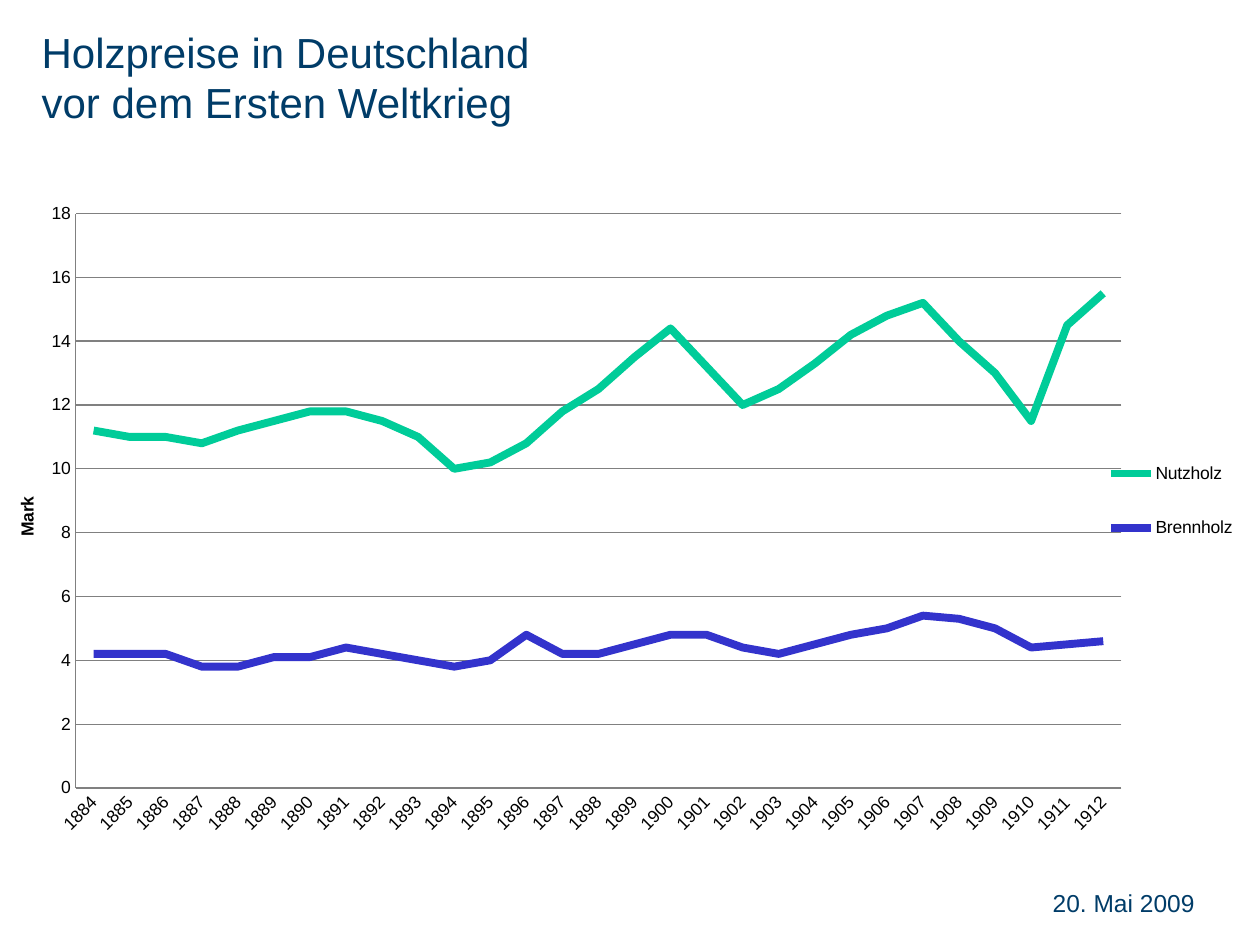
from lxml.etree import SubElement
from pptx import Presentation
from pptx.chart.data import CategoryChartData
from pptx.dml.color import RGBColor
from pptx.enum.chart import XL_CHART_TYPE, XL_LEGEND_POSITION, XL_TICK_MARK
from pptx.enum.text import MSO_ANCHOR, PP_ALIGN
from pptx.oxml.ns import qn
from pptx.util import Inches, Pt

NAVY, GREY = "003C68", "808080"


def paint(target, color):
    target.rgb = RGBColor.from_string(color)


def place(part, **spots):
    """Give a chart part a manual layout in fractions of the chart."""
    for old in part.findall(qn("c:layout")):
        part.remove(old)
    layout = SubElement(part, qn("c:layout"))
    manual = SubElement(layout, qn("c:manualLayout"))
    if part.tag == qn("c:plotArea"):
        SubElement(manual, qn("c:layoutTarget")).set("val", "inner")
    for key in ("x", "y"):
        SubElement(manual, qn(f"c:{key}Mode")).set("val", "edge")
    for key, spot in spots.items():
        SubElement(manual, qn(f"c:{key}")).set("val", str(spot))
    return layout


deck = Presentation()
deck.slide_width, deck.slide_height = Inches(10), Inches(7.5)
slide = deck.slides.add_slide(deck.slide_layouts[5])

# Title
title = slide.shapes.title
title.left, title.top = Inches(0.23), Inches(0.16)
title.width, title.height = Inches(8.5), Inches(1.2)
title.text_frame.text = "Holzpreise in Deutschland\vvor dem Ersten Weltkrieg"

# Date
date = slide.shapes.add_textbox(Inches(7.5), Inches(7), Inches(2.08), Inches(0.5))
date.text_frame.text = "20. Mai 2009"

for box, size, align in ((title, 24, PP_ALIGN.LEFT), (date, 14, PP_ALIGN.RIGHT)):
    frame = box.text_frame
    frame.word_wrap = True
    frame.vertical_anchor = MSO_ANCHOR.TOP
    para = frame.paragraphs[0]
    para.alignment = align
    for run in para.runs:
        run.font.name, run.font.size = "Arial", Pt(size)
        paint(run.font.color, NAVY)

# Prices per year
data = CategoryChartData()
data.categories = [str(year) for year in range(1884, 1913)]
data.add_series("Nutzholz", [
    11.2, 11, 11, 10.8, 11.2, 11.5, 11.8, 11.8, 11.5, 11,
    10, 10.2, 10.8, 11.8, 12.5, 13.5, 14.4, 13.2, 12, 12.5,
    13.3, 14.2, 14.8, 15.2, 14, 13, 11.5, 14.5, 15.5])
data.add_series("Brennholz", [
    4.2, 4.2, 4.2, 3.8, 3.8, 4.1, 4.1, 4.4, 4.2, 4,
    3.8, 4, 4.8, 4.2, 4.2, 4.5, 4.8, 4.8, 4.4, 4.2,
    4.5, 4.8, 5, 5.4, 5.3, 5, 4.4, 4.5, 4.6])

# Line chart
chart = slide.shapes.add_chart(XL_CHART_TYPE.LINE, Inches(0), Inches(1.41),
                               Inches(10), Inches(5.7), data).chart
chart.has_title = False
chart.font.name, chart.font.size = "Arial", Pt(10)
paint(chart.font.color, "000000")
plot = chart.plots[0]
plot.vary_by_categories = False
for line, color in zip(plot.series, ("00CC99", "3333CC")):
    line.smooth = False
    line.format.line.width = Pt(4.5)
    paint(line.format.line.color, color)
area = chart._chartSpace.chart.plotArea
area.insert(0, place(area, x=0.06, y=0.05, w=0.83, h=0.8))

# Axes
years, marks = chart.category_axis, chart.value_axis
marks.minimum_scale, marks.maximum_scale, marks.major_unit = 0, 18, 2
marks.has_major_gridlines = True
for axis in (years, marks):
    axis.major_tick_mark = axis.minor_tick_mark = XL_TICK_MARK.NONE
for part in (years, marks, marks.major_gridlines):
    part.format.line.width = Pt(0.75)
    paint(part.format.line.color, GREY)
years.tick_labels.font.size = Pt(10)
years._element.find(qn("c:txPr")).find(qn("a:bodyPr")).set("rot", "-2700000")

# Axis title
head = marks.axis_title
head.text_frame.text = "Mark"
font = head.text_frame.paragraphs[0].runs[0].font
font.name, font.size, font.bold = "Arial", Pt(10), True
paint(font.color, "000000")
body = head._element.find(".//" + qn("a:bodyPr"))
body.set("rot", "-5400000")
body.set("vert", "horz")
head._element.insert(1, place(head._element, x=0.01, y=0.44))

# Legend
chart.has_legend = True
legend = chart.legend
legend.position = XL_LEGEND_POSITION.RIGHT
legend.include_in_layout = False
legend.font.name, legend.font.size = "Arial", Pt(10)
legend._element.insert(1, place(legend._element, x=0.87, y=0.35, w=0.12, h=0.2))

deck.save("out.pptx")
